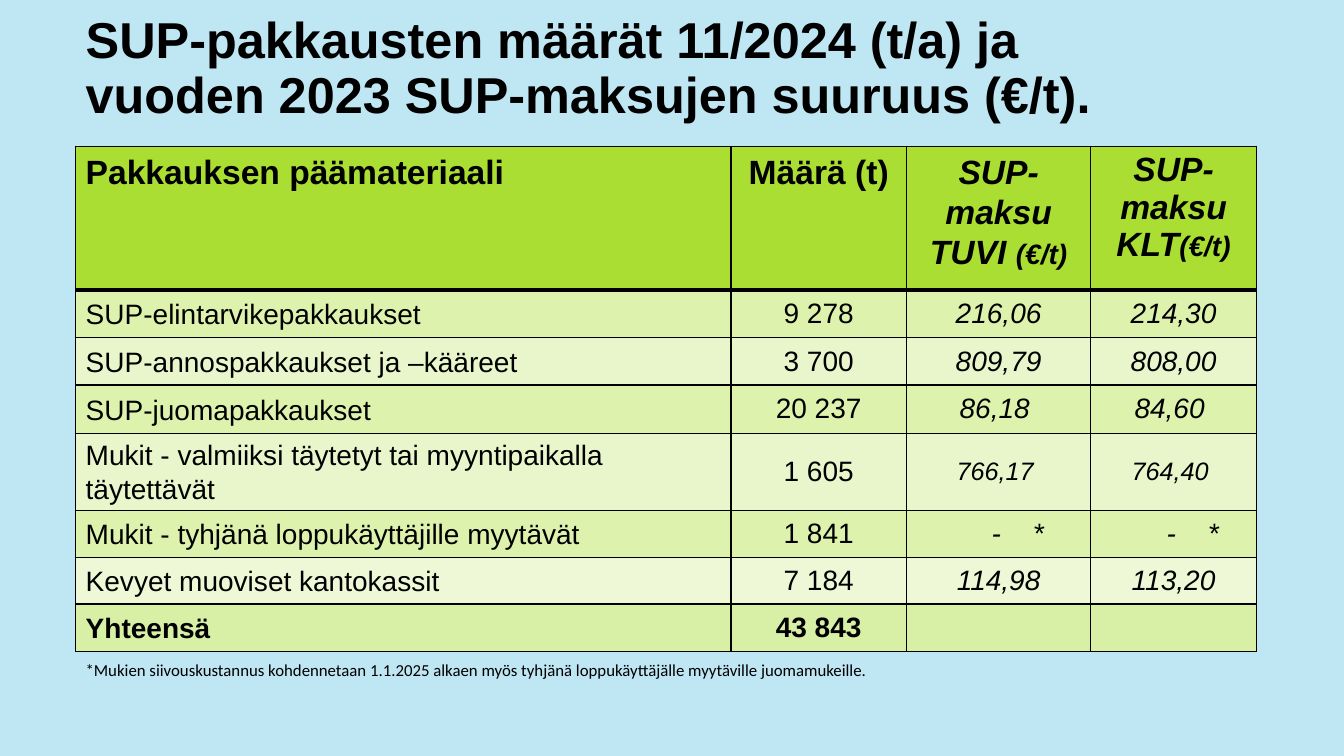
import dataclasses
import pptx
import pptx.dml.color
import pptx.enum.text
import pptx.oxml
import pptx.oxml.ns
import pptx.util

ALIGN = pptx.enum.text.PP_ALIGN
ANCHOR = pptx.enum.text.MSO_ANCHOR
INCH = pptx.util.Inches


@dataclasses.dataclass(frozen=True)
class Theme:
    """Colours, fonts and type sizes of the slide."""
    back: str = "BFE6F3"
    ink: str = "000000"
    head: str = "ABDE32"
    dark: str = "DDF2AD"
    light: str = "E9F6CC"
    pale: str = "EEF8D6"
    total: str = "D8EFA6"
    face: str = "Arial"
    small: str = "Calibri"
    title: int = 36
    label: int = 24
    body: int = 20
    minor: int = 18
    note: int = 12


LOOK = Theme()
WIDE, HIGH = 13.33, 7.5
LEFT = 0.75
COLS = (6.5, 1.74, 1.83, 1.64)
ROWS = (1.43, 0.47, 0.47, 0.48, 0.76, 0.47, 0.46, 0.47)
FILLS = (LOOK.head, LOOK.dark, LOOK.light, LOOK.dark, LOOK.light,
         LOOK.dark, LOOK.pale, LOOK.total)
MARK = "-\t*"
DATA = (
    ("Pakkauksen päämateriaali", "Määrä (t)", "SUP-maksu TUVI |(€/t)", "SUP-maksu KLT|(€/t)"),
    ("SUP-elintarvikepakkaukset", "9 278", "216,06", "214,30"),
    ("SUP-annospakkaukset ja –kääreet", "3 700", "809,79", "808,00"),
    ("SUP-juomapakkaukset", "20 237", "86,18 ", "84,60 "),
    ("Mukit - valmiiksi täytetyt tai myyntipaikalla täytettävät", "1 605", "766,17 ", "764,40 "),
    ("Mukit - tyhjänä loppukäyttäjille myytävät", "1 841", MARK, MARK),
    ("Kevyet muoviset kantokassit", "7 184", "114,98", "113,20"),
    ("Yhteensä", "43 843", "", ""),
)


def tint(hue):
    """Return a colour from its hex code."""
    return pptx.dml.color.RGBColor.from_string(hue)


def style(font, size, face=LOOK.face, bold=False, slant=False):
    """Set the look of a font."""
    font.name, font.size = face, pptx.util.Pt(size)
    font.bold, font.italic = bold, slant
    font.color.rgb = tint(LOOK.ink)


def rule(cell, side, width):
    """Add one border line to a cell."""
    space = pptx.oxml.ns.nsdecls("a")
    cell._tc.get_or_add_tcPr().append(pptx.oxml.parse_xml(
        f'<a:ln{side} {space} w="{pptx.util.Pt(width)}"><a:solidFill>'
        f'<a:srgbClr val="{LOOK.ink}"/></a:solidFill></a:ln{side}>'))


def stop(para, place):
    """Add a left tab stop to a paragraph."""
    space = pptx.oxml.ns.nsdecls("a")
    para._p.get_or_add_pPr().append(pptx.oxml.parse_xml(
        f'<a:tabLst {space}><a:tab pos="{INCH(place)}" algn="l"/></a:tabLst>'))


def fill_cell(cell, row, col):
    """Write and format one cell by its row and column."""
    text, head = DATA[row][col], row == 0
    for side in "LRTB":
        rule(cell, side, 3 if head and side == "B" else 1)
    cell.fill.solid()
    cell.fill.fore_color.rgb = tint(FILLS[row])
    cell.vertical_anchor = ANCHOR.TOP if head else ANCHOR.MIDDLE
    para = cell.text_frame.paragraphs[0]
    if text == MARK:
        cell.margin_left = INCH(COLS[col] / 2 - 0.07)
        stop(para, 0.41)
    para.alignment = ALIGN.LEFT if col == 0 or text == MARK else ALIGN.CENTER
    if col == 0 or (head and col < 3):
        para.line_spacing, para.space_after = 1.07, pptx.util.Pt(8)
    size = LOOK.label if head else LOOK.body
    if row == 4 and col > 1:
        size = LOOK.minor
    bold, slant = head or row == len(DATA) - 1, col > 1
    style(para.font, size, bold=bold, slant=slant)
    for part, piece in enumerate(text.split("|") if text else ()):
        run = para.add_run()
        run.text = piece
        if "|" in text:
            style(run.font, LOOK.body if part else size, bold=bold, slant=slant)


def add_grid(slide, box):
    """Place the table of amounts and fees in the box."""
    place = map(INCH, box)
    table = slide.shapes.add_table(len(ROWS), len(COLS), *place).table
    table.horz_banding = False
    for col, share in zip(table.columns, COLS):
        col.width = INCH(box[2] * share / sum(COLS))
    for row, share in zip(table.rows, ROWS):
        row.height = INCH(box[3] * share / sum(ROWS))
    for row in range(len(ROWS)):
        for col in range(len(COLS)):
            fill_cell(table.cell(row, col), row, col)


def add_title(slide, box):
    """Place the title in the box."""
    title = slide.shapes.title
    title.left, title.top, title.width, title.height = map(INCH, box)
    frame = title.text_frame
    frame.text = "SUP-pakkausten määrät 11/2024 (t/a) ja vuoden 2023 SUP-maksujen suuruus (€/t)."
    frame.word_wrap = True
    frame.auto_size = pptx.enum.text.MSO_AUTO_SIZE.NONE
    frame.vertical_anchor = ANCHOR.MIDDLE
    para = frame.paragraphs[0]
    para.alignment, para.line_spacing = ALIGN.LEFT, 0.9
    style(para.font, LOOK.title, bold=True)


def add_note(slide, box):
    """Place the footnote in the box."""
    frame = slide.shapes.add_textbox(*map(INCH, box)).text_frame
    frame.word_wrap = True
    frame.text = ("*Mukien siivouskustannus kohdennetaan 1.1.2025 alkaen myös "
                  "tyhjänä loppukäyttäjälle myytäville juomamukeille.")
    style(frame.paragraphs[0].font, LOOK.note, LOOK.small)


def main():
    """Build the slide and save it."""
    deck = pptx.Presentation()
    deck.slide_width, deck.slide_height = INCH(WIDE), INCH(HIGH)
    slide = deck.slides.add_slide(deck.slide_layouts[5])
    slide.background.fill.solid()
    slide.background.fill.fore_color.rgb = tint(LOOK.back)
    add_title(slide, (LEFT, 0.08, WIDE * 0.85, 1.22))
    add_grid(slide, (LEFT, 1.45, sum(COLS), sum(ROWS)))
    add_note(slide, (LEFT, 6.5, 11.89, 0.3))
    deck.save("out.pptx")


if __name__ == "__main__":
    main()
